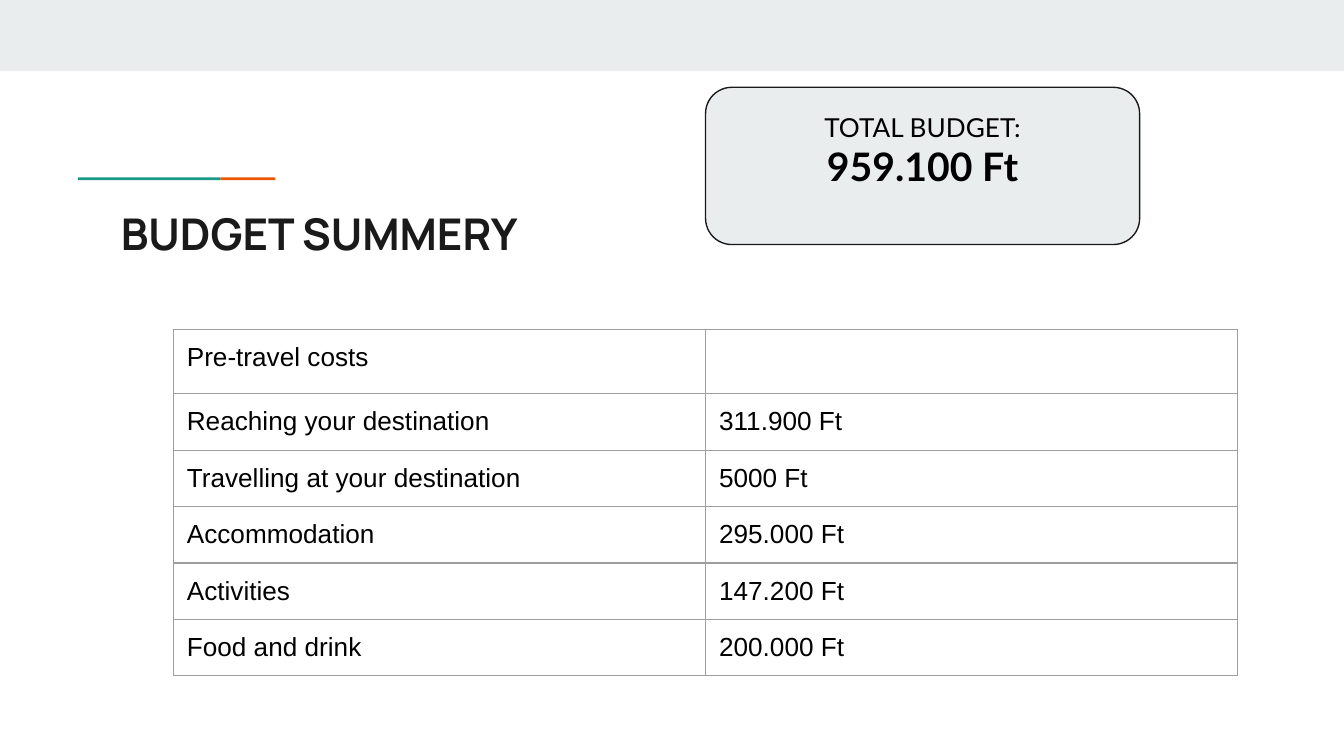
from dataclasses import dataclass

from lxml.etree import SubElement
from pptx import Presentation
from pptx.dml.color import RGBColor
from pptx.enum.shapes import MSO_SHAPE
from pptx.enum.text import MSO_ANCHOR, MSO_AUTO_SIZE, PP_ALIGN
from pptx.oxml.ns import qn
from pptx.util import Inches, Pt


@dataclass(frozen=True)
class Theme:
    paper: str = "FFFFFF"
    pale: str = "E9EDEE"
    teal: str = "1A9988"
    orange: str = "EB5600"
    ink: str = "1A1A1A"
    black: str = "000000"
    grid: str = "9E9E9E"
    heading_font: str = "Manrope"
    callout_font: str = "Lato"
    table_font: str = "Arial"
    heading_size: float = 23.4
    total_size: float = 21
    body_size: float = 14
    hairline: float = 0.75


THEME = Theme()


def write(paragraph, text, *, font, size, color=THEME.black, bold=False, align=PP_ALIGN.LEFT):
    paragraph.alignment = align
    run = paragraph.add_run()
    run.text = text
    run.font.name = font
    run.font.size = Pt(size)
    run.font.bold = bold
    run.font.color.rgb = RGBColor.from_string(color)


def border_cell(cell):
    """Draw a hairline on all four sides; call before setting the cell's fill."""
    properties = cell._tc.get_or_add_tcPr()
    for side in ("a:lnL", "a:lnR", "a:lnT", "a:lnB"):
        line = SubElement(properties, qn(side), w=str(Pt(THEME.hairline)))
        fill = SubElement(line, qn("a:solidFill"))
        SubElement(fill, qn("a:srgbClr"), val=THEME.grid)


prs = Presentation()
prs.slide_width = Inches(10)
prs.slide_height = Inches(10) * 9 // 16
slide = prs.slides.add_slide(prs.slide_layouts[5])
slide.background.fill.solid()
slide.background.fill.fore_color.rgb = RGBColor.from_string(THEME.paper)

# Top band and two-colour accent rule
for left, top, width, height, color in (
    (0, 0, 10, 0.53, THEME.pale),
    (1.64, 1.32, 0.41, 0.02, THEME.orange),
    (0.58, 1.32, 1.06, 0.02, THEME.teal),
):
    bar = slide.shapes.add_shape(
        MSO_SHAPE.RECTANGLE, Inches(left), Inches(top), Inches(width), Inches(height))
    bar.shadow.inherit = False
    bar.fill.solid()
    bar.fill.fore_color.rgb = RGBColor.from_string(color)
    bar.line.fill.background()

# Title
title = slide.shapes.title
title.left, title.top = Inches(0.8), Inches(1.44)
title.width, title.height = Inches(8.41), Inches(0.59)
heading = title.text_frame
heading.auto_size = MSO_AUTO_SIZE.NONE
heading.vertical_anchor = MSO_ANCHOR.TOP
heading.margin_left = heading.margin_right = Inches(0.1)
heading.margin_top = heading.margin_bottom = Inches(0.1)
write(heading.paragraphs[0], "BUDGET SUMMERY", font=THEME.heading_font,
      size=THEME.heading_size, color=THEME.ink, bold=True)

# Cost table
costs = (
    ("Pre-travel costs", ""),
    ("Reaching your destination", "311.900 Ft"),
    ("Travelling at your destination", "5000 Ft"),
    ("Accommodation", "295.000 Ft"),
    ("Activities", "147.200 Ft"),
    ("Food and drink", "200.000 Ft"),
)
header_height, row_height, column_width = Inches(0.48), Inches(0.42), Inches(3.96)
cost_table = slide.shapes.add_table(
    len(costs), 2, Inches(1.29), Inches(2.45), 2 * column_width,
    header_height + (len(costs) - 1) * row_height).table
cost_table.first_row = cost_table.horz_banding = False
for column in cost_table.columns:
    column.width = column_width
for r, entries in enumerate(costs):
    cost_table.rows[r].height = row_height if r else header_height
    for c, entry in enumerate(entries):
        cell = cost_table.cell(r, c)
        border_cell(cell)
        cell.fill.background()
        if entry:
            cell.margin_left = cell.margin_right = Inches(0.1)
            cell.margin_top = cell.margin_bottom = Inches(0.1)
            write(cell.text_frame.paragraphs[0], entry,
                  font=THEME.table_font, size=THEME.body_size)

# Total callout
total = slide.shapes.add_shape(
    MSO_SHAPE.FLOWCHART_ALTERNATE_PROCESS,
    Inches(5.25), Inches(0.65), Inches(3.23), Inches(1.17))
total.shadow.inherit = False
total.fill.solid()
total.fill.fore_color.rgb = RGBColor.from_string(THEME.pale)
total.line.color.rgb = RGBColor.from_string(THEME.ink)
total.line.width = Pt(THEME.hairline)
callout = total.text_frame
callout.word_wrap = True
callout.vertical_anchor = MSO_ANCHOR.MIDDLE
callout.margin_left = callout.margin_right = callout.margin_top = Inches(0.1)
callout.margin_bottom = Inches(0.33)
write(callout.paragraphs[0], "TOTAL BUDGET:", font=THEME.callout_font,
      size=THEME.body_size, align=PP_ALIGN.CENTER)
write(callout.add_paragraph(), "959.100 Ft", font=THEME.callout_font,
      size=THEME.total_size, bold=True, align=PP_ALIGN.CENTER)

prs.save("out.pptx")
